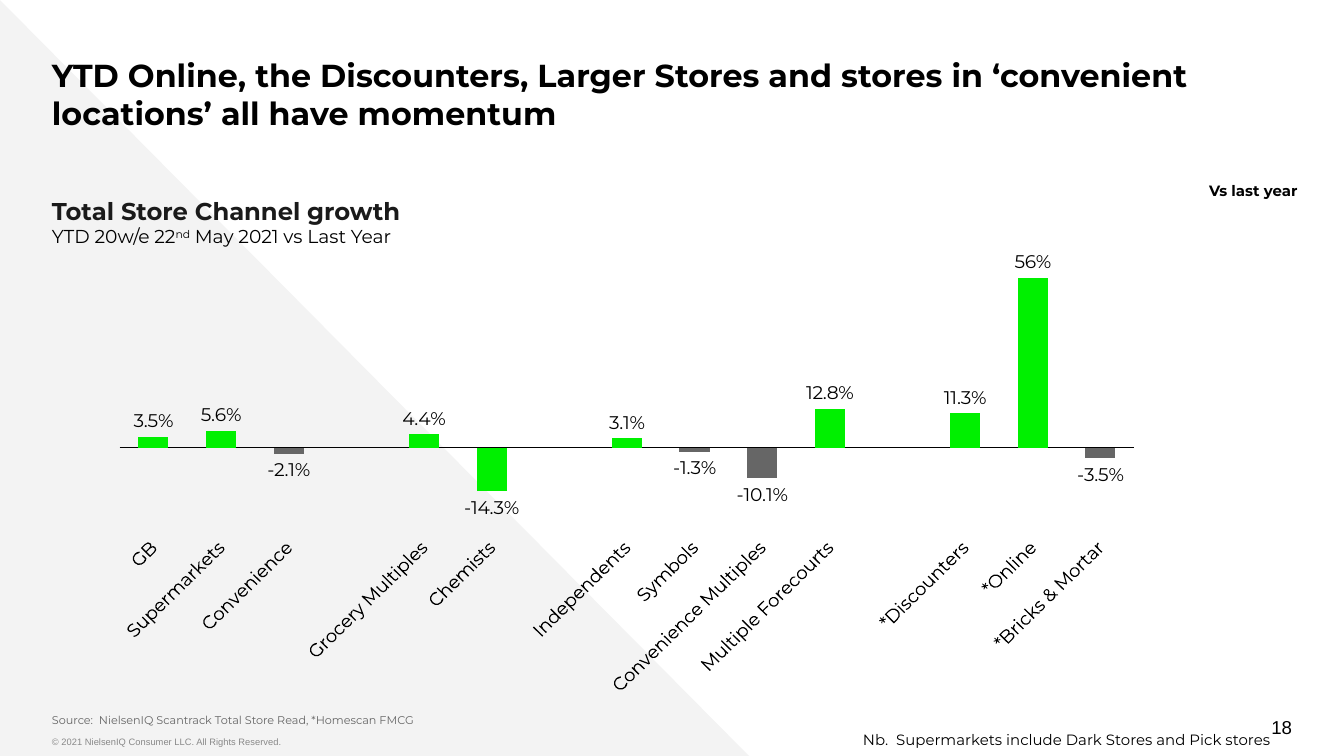
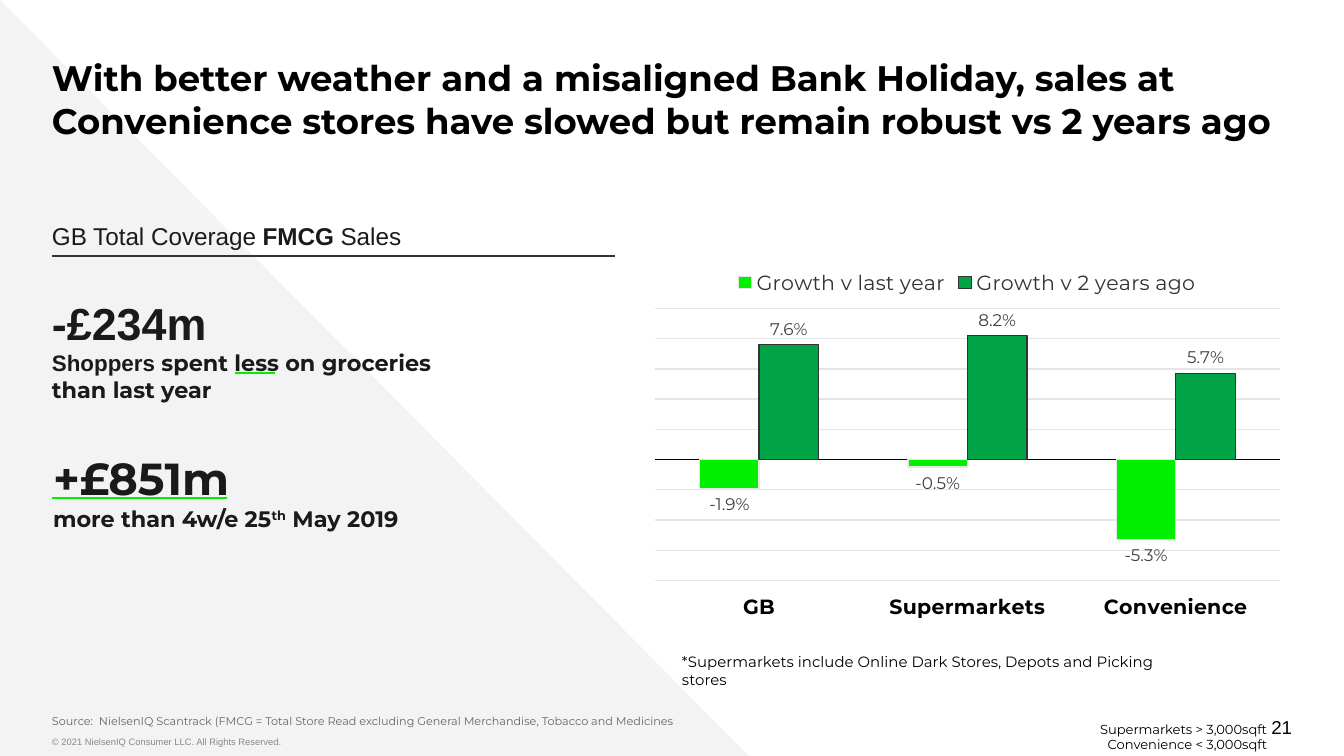
from lxml import etree
from pptx import Presentation
from pptx.chart.data import CategoryChartData
from pptx.dml.color import RGBColor
from pptx.enum.chart import XL_CHART_TYPE, XL_LABEL_POSITION, XL_LEGEND_POSITION, XL_TICK_LABEL_POSITION, XL_TICK_MARK
from pptx.enum.shapes import MSO_CONNECTOR, MSO_SHAPE
from pptx.enum.text import MSO_ANCHOR, PP_ALIGN
from pptx.oxml.ns import qn
from pptx.util import Emu, Pt

COLUMNS = XL_CHART_TYPE.COLUMN_CLUSTERED
OUTSIDE_END = XL_LABEL_POSITION.OUTSIDE_END
LEGEND_TOP = XL_LEGEND_POSITION.TOP
LABELS_LOW = XL_TICK_LABEL_POSITION.LOW
NO_TICK = XL_TICK_MARK.NONE
STRAIGHT = MSO_CONNECTOR.STRAIGHT
TRIANGLE = MSO_SHAPE.RIGHT_TRIANGLE
TOP, MIDDLE, BOTTOM = MSO_ANCHOR.TOP, MSO_ANCHOR.MIDDLE, MSO_ANCHOR.BOTTOM
LEFT, RIGHT = PP_ALIGN.LEFT, PP_ALIGN.RIGHT

SLIDE_WIDTH, SLIDE_HEIGHT = 1344, 756
SCALE = 914400 * 10 / SLIDE_WIDTH
MARGIN = 52
PERCENT, WHOLE_PERCENT = "0.0%", "0%"

COLORS = {
    "white": "FFFFFF",
    "black": "000000",
    "ink": "1A1A1A",
    "dark": "333333",
    "label": "404040",
    "gray": "666666",
    "copyright": "888888",
    "grid": "E5E5E5",
    "triangle": "F3F3F3",
    "lime": "00F000",
    "green": "00A346",
}


def style(name, size, color="black", bold=False):
    return {"name": name, "size": size, "color": color, "bold": bold}


STYLES = {
    "title": style("Montserrat", 17, bold=True),
    "large title": style("Montserrat", 19, bold=True),
    "source": style("Montserrat", 6, "gray"),
    "copyright": style("Arial", 5, "copyright"),
    "page": style("Arial", 10),
    "note": style("Montserrat", 8),
    "bold note": style("Montserrat", 8, bold=True),
    "small note": style("Montserrat", 7),
    "heading": style("Montserrat", 13, "ink", True),
    "subheading": style("Montserrat", 10),
    "sales heading": style("Arial", 13, "ink"),
    "loss": style("Arial", 24, "ink", True),
    "gain": style("Montserrat", 24, "ink", True),
    "detail": style("Montserrat", 12, "ink", True),
    "chart": style("Montserrat", 10),
    "category": style("Montserrat", 11, bold=True),
    "legend": style("Montserrat", 11, "dark"),
    "value": style("Montserrat", 9, "label"),
}
SUPERSCRIPT = {"baseline": "30000"}
NO_INSET, FLAT_INSET, TITLE_INSET, BOX_INSET = (0, 0), (0, 7), (0, 13), (13, 7)

COPYRIGHT = "© 2021 NielsenIQ Consumer LLC. All Rights Reserved."

CHANNEL_SLIDE = {
    "title": ("YTD Online, the Discounters, Larger Stores and stores in ‘convenient locations’ all have momentum",
              "title", 1282),
    "source": "Source:  NielsenIQ Scantrack Total Store Read, *Homescan FMCG",
    "source top": 707,
    "page": "18",
    "texts": [
        {"box": (MARGIN, 189, 559, 66), "inset": FLAT_INSET, "paragraphs": [
            ("heading", ["Total Store Channel growth"]),
            ("subheading", ["YTD 20w/e 22", ("nd", SUPERSCRIPT), " May 2021 vs Last Year"])]},
        {"box": (799, 724, 485, 32), "align": RIGHT, "paragraphs": [
            ("note", ["Nb.  Supermarkets include Dark Stores and Pick stores"])]},
        {"box": (1196, 175, 130, 32), "paragraphs": [("bold note", ["Vs last year"])]},
    ],
    "lines": [],
    "chart": {
        "box": (109, 223, 1057, 473),
        "categories": ["GB", "Supermarkets", "Convenience", "", "Grocery Multiples", "Chemists", "",
                       "Independents", "Symbols", "Convenience Multiples", "Multiple Forecourts", "",
                       "*Discounters", "*Online", "*Bricks & Mortar"],
        "series": [
            {"name": "Series 1", "color": "lime", "style": "chart",
             "gray points": [2, 8, 9, 14], "whole points": [13],
             "values": [0.035, 0.056, -0.021, None, 0.044, -0.143, None, 0.031, -0.013, -0.101,
                        0.128, None, 0.113, 0.56, -0.035]}],
        "gap": 125,
        "axis": {"minimum_scale": -0.25},
        "category style": "chart",
        "rotation": -45,
        "layout": {"x": 0.01, "y": 0.06, "w": 0.96, "h": 0.59},
    },
}

SALES_SLIDE = {
    "title": ("With better weather and a misaligned Bank Holiday, sales at Convenience stores have slowed "
              "but remain robust vs 2 years ago", "large title", 1239),
    "source": "Source:  NielsenIQ Scantrack (FMCG = Total Store Read excluding General Merchandise, "
              "Tobacco and Medicines",
    "source top": 708,
    "page": "21",
    "texts": [
        {"box": (669, 646, 528, 50), "paragraphs": [
            ("note", ["*Supermarkets include Online Dark Stores, Depots and Picking stores"])]},
        {"box": (MARGIN, 214, 559, 44), "inset": FLAT_INSET, "paragraphs": [
            ("sales heading", ["GB Total Coverage ", ("FMCG", {"bold": True}), " Sales"])]},
        {"box": (MARGIN, 306, 407, 87), "inset": NO_INSET, "anchor": MIDDLE, "paragraphs": [
            ("loss", ["-£234m"]),
            ("detail", [("Shoppers ", {"name": "Arial"}), "spent less on groceries than last year"])]},
        {"box": (53, 448, 388, 87), "inset": NO_INSET, "anchor": MIDDLE, "paragraphs": [
            ("gain", ["+£851m"]),
            ("detail", ["more than 4w/e 25", ("th", SUPERSCRIPT), " May 2019"])]},
        {"box": (881, 714, 399, 46), "align": RIGHT, "paragraphs": [
            ("small note", ["Supermarkets > 3,000sqft"]),
            ("small note", ["Convenience < 3,000sqft"])]},
    ],
    "lines": [
        (MARGIN, 615, 256, "dark", 0.75),
        (MARGIN, 227, 498, "lime", 1.5),
        (235, 275, 373, "lime", 1.5),
    ],
    "chart": {
        "box": (642, 254, 651, 374),
        "categories": ["GB", "Supermarkets", "Convenience"],
        "series": [
            {"name": "Growth v last year", "color": "lime", "line": "grid", "style": "value",
             "values": [-0.019, -0.005, -0.053]},
            {"name": "Growth v 2 years ago", "color": "green", "line": "dark", "style": "value",
             "values": [0.076, 0.082, 0.057]}],
        "gap": 150,
        "axis": {"minimum_scale": -0.08, "maximum_scale": 0.1, "major_unit": 0.02},
        "category style": "category",
        "grid": "grid",
        "legend": "legend",
    },
}


def px(value):
    return Emu(round(value * SCALE))


def place(box):
    return [px(value) for value in box]


def rgb(name):
    return RGBColor.from_string(COLORS[name])


def format_font(font, values):
    for name, value in values.items():
        if name == "color":
            font.color.rgb = rgb(value)
        elif name == "baseline":
            font._element.set(name, value)
        else:
            setattr(font, name, Pt(value) if name == "size" else value)


def format_fill(fill, color):
    fill.solid()
    fill.fore_color.rgb = rgb(color)


def format_line(line, color, width=0.75):
    line.color.rgb = rgb(color)
    line.width = Pt(width)


def add_text(slide, box, paragraphs, inset=BOX_INSET, anchor=TOP, align=LEFT):
    frame = slide.shapes.add_textbox(*place(box)).text_frame
    frame.word_wrap = True
    frame.vertical_anchor = anchor
    frame.margin_left = frame.margin_right = px(inset[0])
    frame.margin_top = frame.margin_bottom = px(inset[1])
    for index, (style_name, pieces) in enumerate(paragraphs):
        paragraph = frame.paragraphs[0] if index == 0 else frame.add_paragraph()
        paragraph.alignment = align
        for piece in pieces:
            text, changes = (piece, {}) if isinstance(piece, str) else piece
            run = paragraph.add_run()
            run.text = text
            format_font(run.font, {**STYLES[style_name], **changes})


def add_line(slide, left, right, y, color, width):
    line = slide.shapes.add_connector(STRAIGHT, *place((left, y, right, y)))
    format_line(line.line, color, width)
    etree.SubElement(line._element.spPr, qn("a:effectLst"))


def set_plot_layout(chart, fractions):
    plot_area = chart._chartSpace.find(".//" + qn("c:plotArea"))
    for old in plot_area.findall(qn("c:layout")):
        plot_area.remove(old)
    layout = etree.Element(qn("c:layout"))
    manual = etree.SubElement(layout, qn("c:manualLayout"))
    settings = {"layoutTarget": "inner", "xMode": "edge", "yMode": "edge", **fractions}
    for name, value in settings.items():
        etree.SubElement(manual, qn("c:" + name)).set("val", str(value))
    plot_area.insert(0, layout)


def format_series(series, content):
    series.invert_if_negative = False
    format_fill(series.format.fill, content["color"])
    if "line" in content:
        format_line(series.format.line, content["line"])
    for index in content.get("gray points", []):
        format_fill(series.points[index].format.fill, "gray")
    labels = series.data_labels
    labels.show_value = True
    labels.number_format = PERCENT
    labels.number_format_is_linked = False
    labels.position = OUTSIDE_END
    format_font(labels.font, STYLES[content["style"]])
    for index in content.get("whole points", []):
        label = series.points[index].data_label
        label.position = OUTSIDE_END
        format_font(label.font, STYLES[content["style"]])
        number_format = etree.Element(qn("c:numFmt"), formatCode=WHOLE_PERCENT, sourceLinked="0")
        labels._element.find(qn("c:dLbl")).insert(1, number_format)


def add_chart(slide, content):
    data = CategoryChartData(number_format=PERCENT)
    data.categories = content["categories"]
    for series in content["series"]:
        data.add_series(series["name"], series["values"])
    chart = slide.shapes.add_chart(COLUMNS, *place(content["box"]), data).chart
    format_font(chart.font, STYLES["chart"])
    chart.has_title = False
    chart.has_legend = "legend" in content
    if chart.has_legend:
        chart.legend.position = LEGEND_TOP
        chart.legend.include_in_layout = False
        format_font(chart.legend.font, STYLES[content["legend"]])

    plot = chart.plots[0]
    plot.gap_width = content["gap"]
    plot.vary_by_categories = False
    for series, values in zip(plot.series, content["series"]):
        format_series(series, values)

    value_axis = chart.value_axis
    value_axis.visible = False
    value_axis.has_major_gridlines = "grid" in content
    if value_axis.has_major_gridlines:
        format_line(value_axis.major_gridlines.format.line, content["grid"])
    for name, value in content["axis"].items():
        setattr(value_axis, name, value)

    category_axis = chart.category_axis
    category_axis.tick_label_position = LABELS_LOW
    category_axis.major_tick_mark = category_axis.minor_tick_mark = NO_TICK
    format_line(category_axis.format.line, "black")
    format_font(category_axis.tick_labels.font, STYLES[content["category style"]])
    if "rotation" in content:
        body = category_axis._element.find(qn("c:txPr")).find(qn("a:bodyPr"))
        body.set("rot", str(content["rotation"] * 60000))
    if "layout" in content:
        set_plot_layout(chart, content["layout"])


def add_frame(slide, content):
    format_fill(slide.background.fill, "white")
    triangle = slide.shapes.add_shape(TRIANGLE, *place((0, 0, 751, 758)))
    triangle.shadow.inherit = False
    format_fill(triangle.fill, "triangle")
    triangle.line.fill.background()
    title, title_style, title_width = content["title"]
    add_text(slide, (MARGIN, 43, title_width, 59), [(title_style, [title])], TITLE_INSET)
    add_text(slide, (MARGIN, content["source top"], 1199, 27), [("source", [content["source"]])],
             TITLE_INSET, BOTTOM)
    add_text(slide, (MARGIN, 731, 745, 26), [("copyright", [COPYRIGHT])], FLAT_INSET)
    add_text(slide, (989, 707, 303, 40), [("page", [content["page"]])], FLAT_INSET, MIDDLE, RIGHT)


def main():
    presentation = Presentation()
    presentation.slide_width, presentation.slide_height = px(SLIDE_WIDTH), px(SLIDE_HEIGHT)
    for content in (CHANNEL_SLIDE, SALES_SLIDE):
        slide = presentation.slides.add_slide(presentation.slide_layouts[6])
        add_frame(slide, content)
        add_chart(slide, content["chart"])
        for text in content["texts"]:
            add_text(slide, **text)
        for line in content["lines"]:
            add_line(slide, *line)
    presentation.save("out.pptx")


if __name__ == "__main__":
    main()
